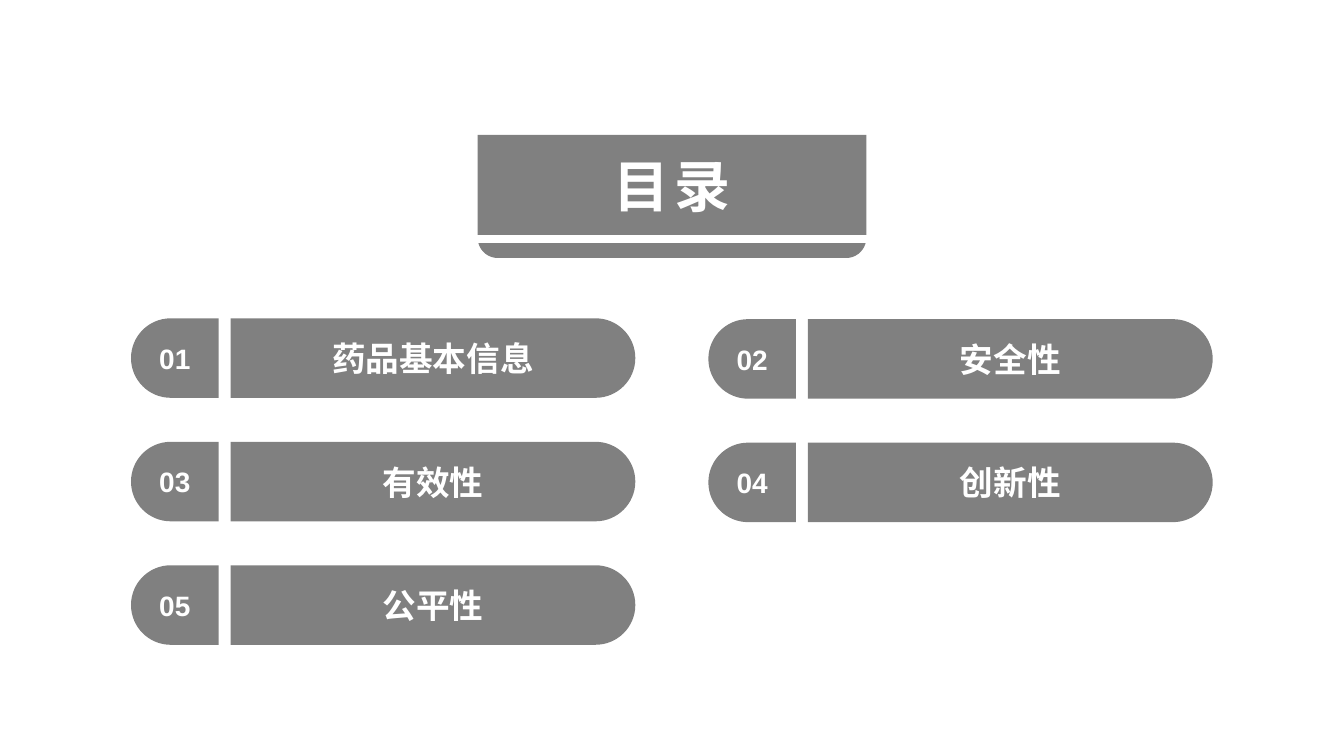
from dataclasses import dataclass
from math import asin, cos, degrees, radians, sin, tan

from pptx import Presentation
from pptx.dml.color import RGBColor
from pptx.enum.text import MSO_ANCHOR, MSO_AUTO_SIZE, PP_ALIGN
from pptx.oxml.ns import qn
from pptx.util import Pt


@dataclass(frozen=True)
class Theme:
    """Colours, font and type sizes of the slide."""
    fill: RGBColor = RGBColor(0x80, 0x80, 0x80)
    text: RGBColor = RGBColor(0xFF, 0xFF, 0xFF)
    font: str = "Arial"
    title: int = 40
    item: int = 24
    number: int = 20


THEME = Theme()
ITEMS = ["药品基本信息", "安全性", "有效性", "创新性", "公平性"]


def line(x, y):
    """Return a straight segment to a point."""
    return [(x, y)]


def arc(cx, cy, r, start, end):
    """Return a Bézier segment along a circle, with angles in degrees clockwise."""
    a, b = radians(start), radians(end)
    k = 4 / 3 * tan((b - a) / 4)
    return [(cx + r * (cos(a) - k * sin(a)), cy + r * (sin(a) + k * cos(a))),
            (cx + r * (cos(b) + k * sin(b)), cy + r * (sin(b) - k * cos(b))),
            (cx + r * cos(b), cy + r * sin(b))]


def add_outline(s, x, y, *segments):
    """Draw a closed, filled outline of straight and curved segments from x, y."""
    fb = s.shapes.build_freeform(Pt(x), Pt(y))
    fb.add_line_segments([(Pt(px), Pt(py)) for seg in segments for px, py in seg])
    sp = fb.convert_to_shape()
    steps = iter(list(sp._element.iter(qn("a:lnTo"))))
    for seg in segments:
        head, *rest = [next(steps) for _ in seg]
        if rest:
            head.tag = qn("a:cubicBezTo")
        for step in rest:
            head.append(step[0])
            step.getparent().remove(step)
    sp.shadow.inherit = False
    sp.fill.solid()
    sp.fill.fore_color.rgb = THEME.fill
    sp.line.fill.background()
    return sp


def set_text(sp, text, *, size, wrap=False, spacing=0):
    """Write centred bold text in a shape."""
    tf = sp.text_frame
    tf.word_wrap = wrap
    tf.auto_size = MSO_AUTO_SIZE.NONE
    tf.vertical_anchor = MSO_ANCHOR.MIDDLE
    p = tf.paragraphs[0]
    p.alignment = PP_ALIGN.CENTER
    r = p.add_run()
    r.text = text
    r.font.name = THEME.font
    r.font.size = Pt(size)
    r.font.bold = True
    r.font.color.rgb = THEME.text
    if spacing:
        r.font._element.set("spc", str(spacing * 100))


def add_heading(s, text, x, y, w, h):
    """Build the rounded title plate and, below a slit, its foot."""
    r, plate_h, slit = 14.4, h - 16.5, 5.8
    left, right, low = x + r, x + w - r, y + h - r
    plate = add_outline(
        s, left, y, line(right, y), arc(right, y + r, r, -90, 0),
        line(x + w, y + plate_h), line(x, y + plate_h), line(x, y + r),
        arc(left, y + r, r, 180, 270))
    title = s.shapes.title
    title._element.replace(title._element.spPr, plate._element.spPr)
    s.shapes._spTree.replace(plate._element, title._element)
    set_text(title, text, size=THEME.title, wrap=True, spacing=3)
    top = y + plate_h + slit
    cut = asin((top - low) / r)
    inset, angle = r * cos(cut), degrees(cut)
    add_outline(s, left - inset, top, line(right + inset, top),
                arc(right, low, r, angle, 90), line(left, y + h),
                arc(left, low, r, 90, 180 - angle))


def add_item(s, number, text, x, y, w, h):
    """Build one pill: a number cap on the left and a label on the right."""
    r, cap_w, gap = h / 2, 62.6, 8.5
    cap_right, label_left, label_end = x + cap_w, x + cap_w + gap, x + w - r
    cap = add_outline(s, x + r, y, line(cap_right, y), line(cap_right, y + h),
                      line(x + r, y + h), arc(x + r, y + r, r, 90, 180),
                      arc(x + r, y + r, r, 180, 270))
    set_text(cap, f"{number:02d}", size=THEME.number)
    label = add_outline(s, label_left, y, line(label_end, y),
                        arc(label_end, y + r, r, -90, 0),
                        arc(label_end, y + r, r, 0, 90),
                        line(label_left, y + h), line(label_left, y))
    set_text(label, text, size=THEME.item)


def add_contents(s, x, y, w, h):
    """Lay the items out in two columns, row by row."""
    item_w, item_h, rows = 360.2, 56.8, 3
    col_step, row_step = w - item_w, (h - item_h) / (rows - 1)
    for i, text in enumerate(ITEMS):
        row, col = divmod(i, 2)
        add_item(s, i + 1, text, x + col * col_step,
                 y + row * row_step + col * 0.6, item_w, item_h)


def main():
    """Build and save the contents slide."""
    prs = Presentation()
    prs.slide_width, prs.slide_height = Pt(960), Pt(540)
    s = prs.slides.add_slide(prs.slide_layouts[5])
    add_contents(s, 93.6, 227.4, 772.6, 233.2)
    add_heading(s, "目录", 341.2, 96.3, 277.6, 88)
    prs.save("out.pptx")


if __name__ == "__main__":
    main()
